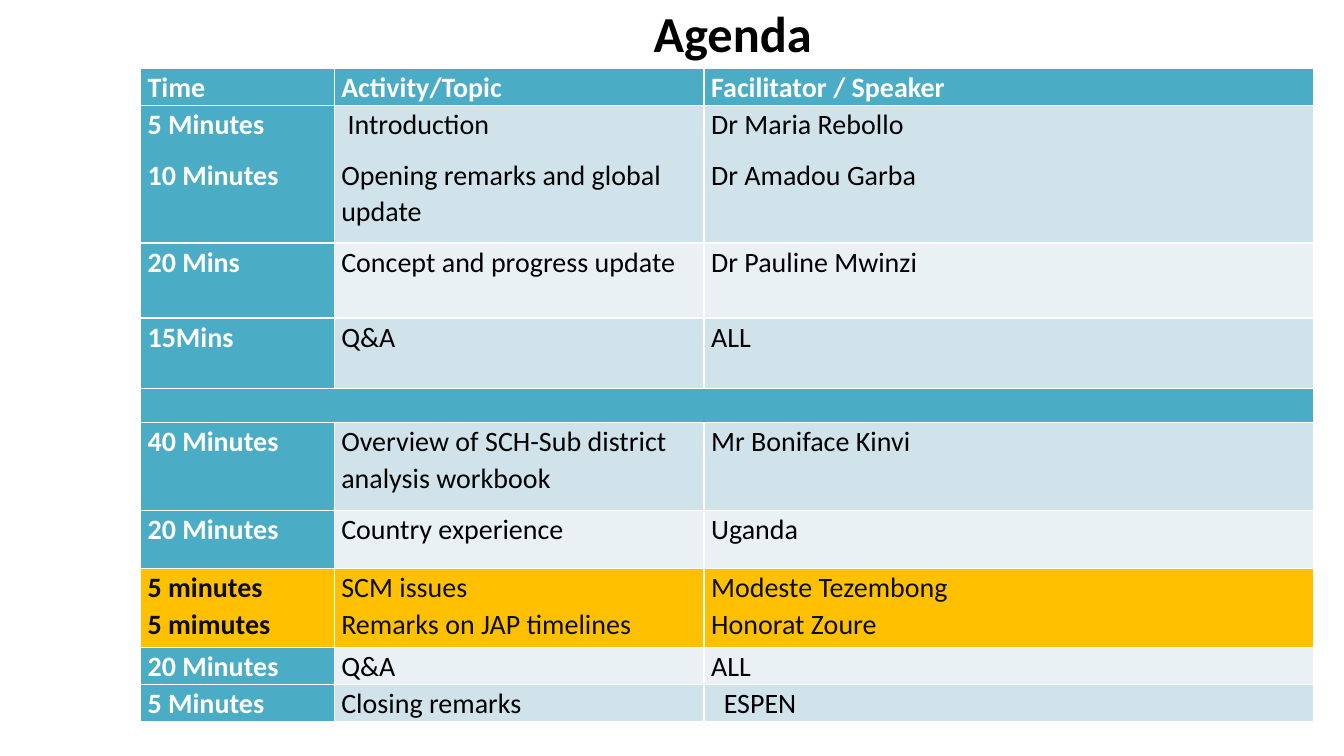
import pptx
import pptx.util
import pptx.dml.color
import pptx.enum.text

Cm, Pt = pptx.util.Cm, pptx.util.Pt
RGBColor = pptx.dml.color.RGBColor

TEAL = RGBColor(0x4B, 0xAC, 0xC6)
PALE_BLUE = RGBColor(0xD0, 0xE3, 0xEA)
PALER_BLUE = RGBColor(0xE9, 0xF1, 0xF5)
AMBER = RGBColor(0xFF, 0xC0, 0x00)
WHITE = RGBColor(0xFF, 0xFF, 0xFF)
BLACK = RGBColor(0x00, 0x00, 0x00)
NEAR_BLACK = RGBColor(0x0D, 0x0D, 0x0D)

COLUMN_WIDTHS = [4.88, 9.32, 15.37]
BREAK_ROW = 4
AMBER_ROW = 7

# Row height in cm, then the paragraphs of each cell
SESSIONS = [
    (0.9, ["Time"], ["Activity/Topic"], ["Facilitator / Speaker"]),
    (3.47, ["5 Minutes", "10 Minutes"],
     ["Introduction", "Opening remarks and global update"],
     ["Dr Maria Rebollo", "Dr Amadou Garba"]),
    (1.89, ["20 Mins"], ["Concept and progress update"], ["Dr Pauline Mwinzi"]),
    (1.77, ["15Mins"], ["Q&A"], ["ALL"]),
    (0.86, [], [], []),
    (2.21, ["40 Minutes"], ["Overview of SCH-Sub district analysis workbook"],
     ["Mr Boniface Kinvi"]),
    (1.48, ["20 Minutes"], ["Country experience"], ["Uganda"]),
    (1.99, ["5 minutes", "5 mimutes"], ["SCM issues", "Remarks on JAP timelines"],
     ["Modeste Tezembong", "Honorat Zoure"]),
    (0.93, ["20 Minutes"], ["Q&A"], ["ALL"]),
    (0.93, ["5 Minutes"], ["Closing remarks"], ["ESPEN"]),
]
INDENTS = {"Introduction": Cm(0.16), "ESPEN": Cm(0.32)}


def add_text(paragraph, text, size, color, bold):
    run = paragraph.add_run()
    run.text = text
    run.font.name = "Calibri"
    run.font.size = Pt(size)
    run.font.color.rgb = color
    run.font.bold = bold


deck = pptx.Presentation()
deck.slide_width, deck.slide_height = Cm(33.87), Cm(19.05)
slide = deck.slides.add_slide(deck.slide_layouts[5])

# Title
title = slide.shapes.title
title.left, title.top, title.width, title.height = Cm(3.86), Cm(0), Cm(29.21), Cm(1.65)
title.text_frame.auto_size = pptx.enum.text.MSO_AUTO_SIZE.NONE
title.text_frame.vertical_anchor = pptx.enum.text.MSO_ANCHOR.MIDDLE
heading = title.text_frame.paragraphs[0]
heading.alignment = pptx.enum.text.PP_ALIGN.CENTER
add_text(heading, "Agenda", 36, BLACK, True)

# Agenda table
agenda = slide.shapes.add_table(
    len(SESSIONS), len(COLUMN_WIDTHS), Cm(3.54), Cm(1.73),
    Cm(sum(COLUMN_WIDTHS)), Cm(sum(session[0] for session in SESSIONS))).table
agenda.first_col = True
for column, width in zip(agenda.columns, COLUMN_WIDTHS):
    column.width = Cm(width)

for row, (height, *topics) in enumerate(SESSIONS):
    agenda.rows[row].height = Cm(height)
    for col, lines in enumerate(topics):
        cell = agenda.cell(row, col)
        cell.margin_left = cell.margin_right = Cm(0.18)
        cell.margin_top = cell.margin_bottom = 0

        # Header, time column and break are teal; the other rows are banded
        is_label = row in (0, BREAK_ROW) or col == 0
        if row == AMBER_ROW:
            fill, color = AMBER, NEAR_BLACK
        elif is_label:
            fill, color = TEAL, WHITE
        else:
            fill, color = (PALE_BLUE if row % 2 else PALER_BLUE), BLACK
        cell.fill.solid()
        cell.fill.fore_color.rgb = fill

        for index, line in enumerate(lines):
            frame = cell.text_frame
            paragraph = frame.add_paragraph() if index else frame.paragraphs[0]
            paragraph.line_spacing = 1.07
            paragraph.space_after = Pt(0 if row == AMBER_ROW else 10)
            if line in INDENTS:
                paragraph._p.get_or_add_pPr().set("marL", str(INDENTS[line]))
            add_text(paragraph, line, 20, color, is_label)

# Break band across all columns
agenda.cell(BREAK_ROW, 0).merge(agenda.cell(BREAK_ROW, 2))

deck.save("out.pptx")
